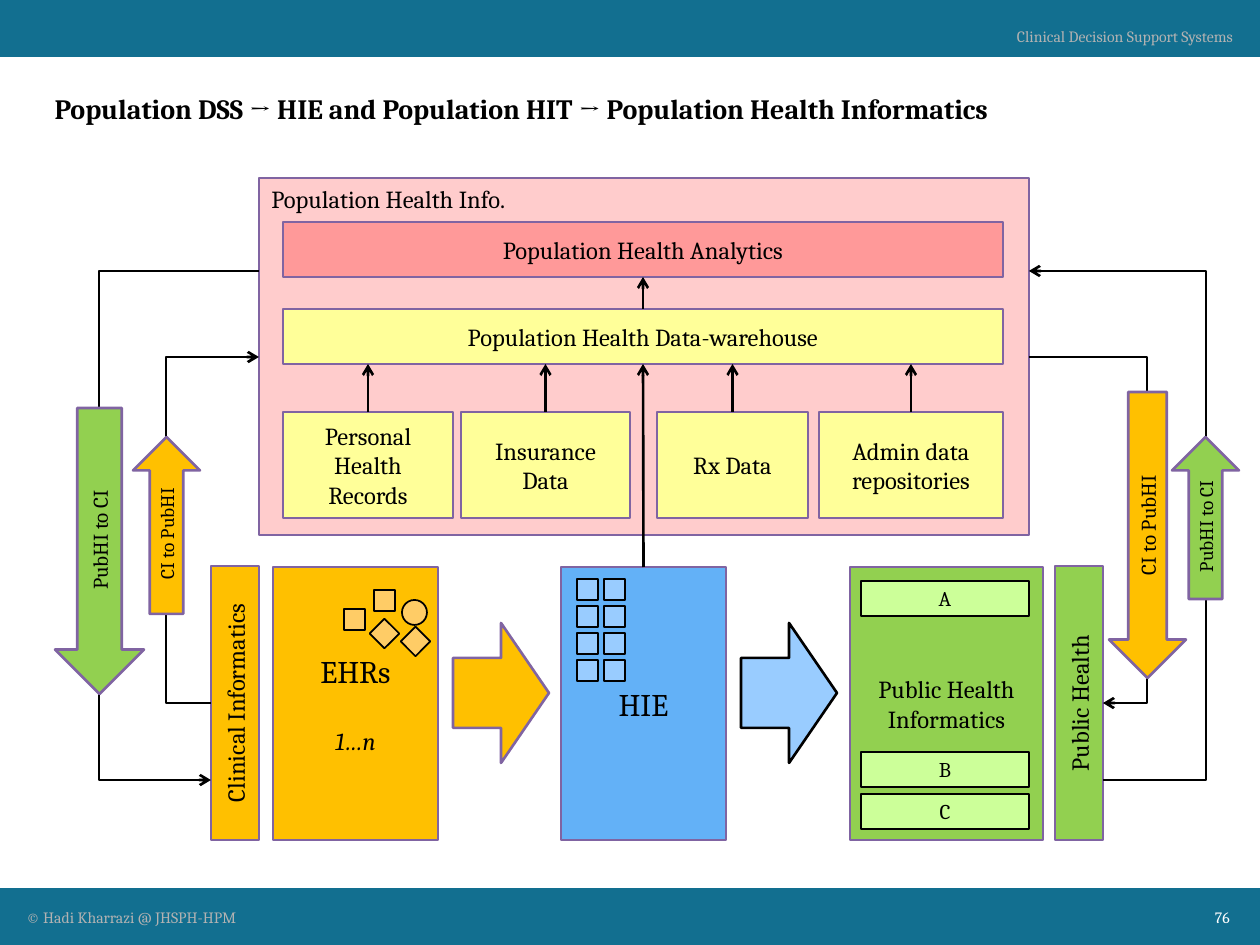
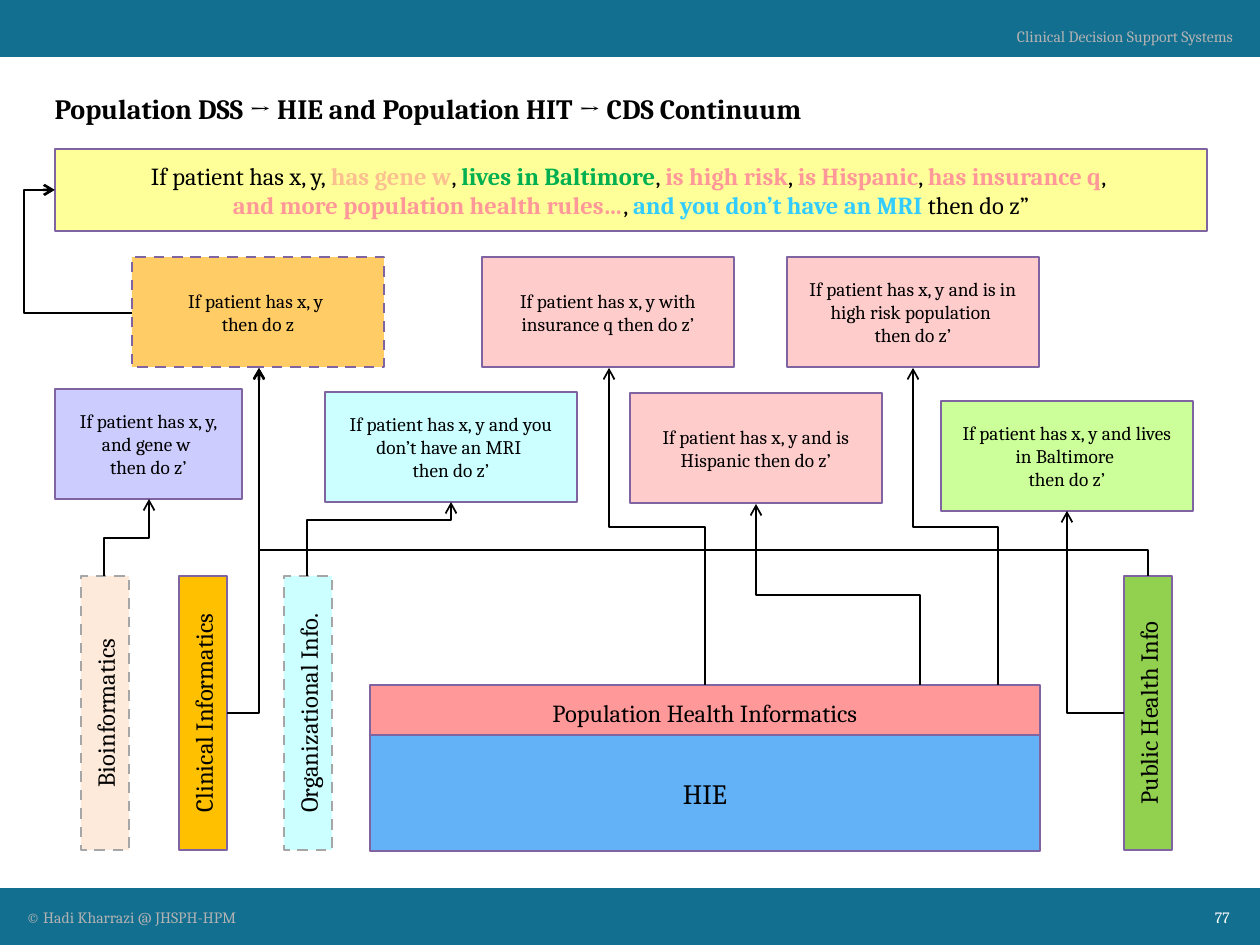
import pptx
import pptx.dml.color
import pptx.enum.dml
import pptx.enum.shapes
import pptx.enum.text
import pptx.oxml.ns
import pptx.util
from lxml import etree

SHAPE = pptx.enum.shapes.MSO_SHAPE
CONNECTOR = pptx.enum.shapes.MSO_CONNECTOR
ALIGN = pptx.enum.text.PP_ALIGN
ANCHOR = pptx.enum.text.MSO_ANCHOR
qn = pptx.oxml.ns.qn

PX = 914400 / 126
SLIDE_W, SLIDE_H = 1260, 945
BAND_H = 57
FONT = "Cambria"

BLACK, WHITE, GREY = "000000", "FFFFFF", "B2B2B2"
TEAL, PURPLE, DASH_GREY = "126F90", "8064A2", "A6A6A6"
ORANGE, LIGHT_ORANGE = "FFC000", "FFCC66"
GREEN, LIGHT_GREEN = "92D050", "CCFF99"
BLUE, LIGHT_BLUE, CYAN = "63B1F7", "99CCFF", "CCFFFF"
PINK, LIGHT_PINK, YELLOW = "FF9999", "FFCCCC", "FFFF99"
PEACH, LILAC = "FDEADA", "CCCCFF"


def px(n):
    return pptx.util.Emu(round(n * PX))


def rgb(value):
    return pptx.dml.color.RGBColor.from_string(value)


def write(sp, content, size=14, color=BLACK, bold=False, italic=False,
          align=ALIGN.CENTER, anchor=ANCHOR.MIDDLE, vert=None, before=0):
    """Add one paragraph: a string, or a list of (text, color or None) where coloured runs are bold."""
    tf = sp.text_frame
    tf.word_wrap = True
    tf.vertical_anchor = anchor
    if vert:
        tf._txBody.bodyPr.set("vert", vert)
    p = tf.add_paragraph() if tf.text else tf.paragraphs[0]
    p.alignment = align
    p.space_before = pptx.util.Pt(before)
    runs = [(content, None)] if isinstance(content, str) else content
    for words, accent in runs:
        for i, line in enumerate(words.split("\n")):
            if i:
                p.add_line_break()
            if not line:
                continue
            r = p.add_run()
            r.text = line
            r.font.name = FONT
            r.font.size = pptx.util.Pt(size)
            r.font.bold = bold or accent is not None
            r.font.italic = italic
            r.font.color.rgb = rgb(accent or color)


def shape(s, x, y, w, h, fill, line=PURPLE, width=1.5, kind=SHAPE.RECTANGLE,
          rotation=0, dash=False, text=None, **fmt):
    sp = s.shapes.add_shape(kind, px(x), px(y), px(w), px(h))
    sp.shadow.inherit = False
    sp.rotation = rotation
    sp.fill.solid()
    sp.fill.fore_color.rgb = rgb(fill)
    if line:
        sp.line.color.rgb = rgb(line)
        sp.line.width = pptx.util.Pt(width)
        if dash:
            sp.line.dash_style = pptx.enum.dml.MSO_LINE.DASH
    else:
        sp.line.fill.background()
    if text:
        write(sp, text, **fmt)
    return sp


def textbox(s, x, y, w, h, text, **fmt):
    write(s.shapes.add_textbox(px(x), px(y), px(w), px(h)), text, **fmt)


def symbol(s, x, y, size, fill, **look):
    """Small outlined item standing for one system or record."""
    shape(s, x, y, size, size, fill, BLACK, 1, **look)


def bar(s, x, y, fill, text, **look):
    """Tall narrow box with text that reads upwards."""
    shape(s, x, y, 48, 274, fill, text=text, vert="vert270", **look)


def flow_arrow(s, x, y, w, h, fill, text, size, down=False):
    shape(s, x, y, w, h, fill, kind=SHAPE.UP_ARROW, rotation=180 if down else 0,
          text=text, size=size, vert="vert" if down else "vert270")


def connector(s, kind, x1, y1, x2, y2, width):
    """Black connector with an arrowhead at its end and no shadow."""
    c = s.shapes.add_connector(kind, px(x1), px(y1), px(x2), px(y2))
    c.line.color.rgb = rgb(BLACK)
    c.line.width = pptx.util.Pt(width)
    etree.SubElement(c.line._get_or_add_ln(), qn("a:tailEnd"), type="arrow")
    etree.SubElement(c._element.spPr, qn("a:effectLst"))
    return c


def rise(s, source, target, joined=False):
    """Straight arrow from the top of source up to the bottom of target."""
    x = (source.left + source.width / 2) / PX
    c = connector(s, CONNECTOR.STRAIGHT, x, source.top / PX,
                  x, (target.top + target.height) / PX, 1.5)
    c.begin_connect(source, 0)
    if joined:
        c.end_connect(target, 2)


def set_bend(c, share):
    guides = c._element.spPr.find(qn("a:prstGeom")).find(qn("a:avLst"))
    etree.SubElement(guides, qn("a:gd"), name="adj1", fmla=f"val {round(share * 100000)}")


def elbow_side(s, x1, y1, x2, y2, bend_x, width=1.5):
    """Leave sideways, run vertically at bend_x, arrive sideways."""
    c = connector(s, CONNECTOR.ELBOW, x1, y1, x2, y2, width)
    set_bend(c, (bend_x - x1) / (x2 - x1))


def elbow_up(s, x1, y1, x2, y2, bend_y, width=1):
    """Leave upwards, run sideways at bend_y, arrive upwards."""
    cx, cy = (x1 + x2) / 2, (y1 + y2) / 2
    half_run, half_rise = (x2 - x1) / 2, (y1 - y2) / 2
    c = connector(s, CONNECTOR.ELBOW, cx - half_rise, cy - half_run,
                  cx + half_rise, cy + half_run, width)
    c._element.spPr.find(qn("a:xfrm")).set("rot", str(270 * 60000))
    set_bend(c, (y1 - bend_y) / (y1 - y2))


def elbow_corner(s, x1, y1, x2, y2):
    """Leave sideways and arrive vertically."""
    c = connector(s, CONNECTOR.ELBOW, x1, y1, x2, y2, 1)
    c._element.spPr.find(qn("a:prstGeom")).set("prst", "bentConnector2")


def new_slide(prs, title, number):
    s = prs.slides.add_slide(prs.slide_layouts[5])
    for y in (0, SLIDE_H - BAND_H):
        shape(s, 0, y, SLIDE_W, BAND_H, TEAL, line=None)
    small = dict(size=9, anchor=ANCHOR.TOP)
    textbox(s, 14, 902, 782, 32, "© Hadi Kharrazi @ JHSPH-HPM", color=GREY,
            align=ALIGN.LEFT, **small)
    textbox(s, 975, 21, 270, 32, "Clinical Decision Support Systems", color=GREY,
            align=ALIGN.RIGHT, **small)
    textbox(s, 1160, 902, 82, 32, number, color=WHITE, align=ALIGN.RIGHT, **small)
    sp = s.shapes.title
    sp.left, sp.top, sp.width, sp.height = px(42), px(83), px(1176), px(50)
    write(sp, title, size=16, bold=True, align=ALIGN.LEFT)
    return s


def population_slide(prs):
    s = new_slide(prs, "Population DSS → HIE and Population HIT → Population Health Informatics", "76")
    shape(s, 259, 178, 770, 357, LIGHT_PINK, text="Population Health Info.",
          align=ALIGN.LEFT, anchor=ANCHOR.TOP)
    analytics = shape(s, 283, 222, 720, 55, PINK, text="Population Health Analytics")
    warehouse = shape(s, 283, 309, 720, 55, YELLOW, text="Population Health Data-warehouse")
    rise(s, warehouse, analytics, joined=True)
    for x, w, name in [(283, 170, "Personal Health Records"), (461, 169, "Insurance Data"),
                       (657, 151, "Rx Data"), (819, 184, "Admin data repositories")]:
        rise(s, shape(s, x, 412, w, 106, YELLOW, text=name), warehouse)

    hie = shape(s, 561, 567, 165, 273, BLUE, text="HIE", size=18)
    rise(s, hie, warehouse, joined=True)
    for row in range(4):
        for col in range(2):
            symbol(s, 577 + 27 * col, 579 + 27 * row, 21, LIGHT_BLUE)

    ehrs = shape(s, 273, 567, 165, 273, ORANGE, text="EHRs", size=18)
    write(ehrs, "1…n", italic=True, before=21)
    for x, y, angle in [(405, 631, 45), (374, 623, 315), (344, 609, 0), (374, 590, 0)]:
        symbol(s, x, y, 21, LIGHT_ORANGE, rotation=angle)
    symbol(s, 402, 600, 25, LIGHT_ORANGE, kind=SHAPE.OVAL)
    for x, fill, line in [(431, ORANGE, PURPLE), (719, LIGHT_BLUE, BLACK)]:
        shape(s, x, 645, 140, 96, fill, line, kind=SHAPE.UP_ARROW, rotation=90)

    shape(s, 850, 567, 193, 273, GREEN, text="Public Health Informatics")
    for y, name in [(581, "A"), (752, "B"), (794, "C")]:
        shape(s, 861, y, 168, 35, LIGHT_GREEN, BLACK, 1, text=name, size=12)
    bar(s, 211, 566, ORANGE, "Clinical Informatics")
    bar(s, 1055, 566, GREEN, "Public Health")

    elbow_side(s, 1029, 357, 1103, 703, 1147)
    elbow_side(s, 211, 703, 259, 357, 166)
    elbow_side(s, 259, 271, 211, 780, 99)
    elbow_side(s, 1103, 780, 1029, 271, 1206)
    flow_arrow(s, 133, 437, 67, 177, ORANGE, "CI to PubHI", 11)
    flow_arrow(s, 1109, 392, 77, 286, ORANGE, "CI to PubHI", 12, down=True)
    flow_arrow(s, 55, 408, 89, 286, GREEN, "PubHI to CI", 12, down=True)
    flow_arrow(s, 1172, 437, 67, 162, GREEN, "PubHI to CI", 11)


def continuum_slide(prs):
    s = new_slide(prs, "Population DSS → HIE and Population HIT → CDS Continuum", "77")
    bar(s, 81, 576, PEACH, "Bioinformatics", line=DASH_GREY, dash=True)
    bar(s, 179, 576, ORANGE, "Clinical Informatics")
    bar(s, 284, 576, CYAN, "Organizational Info.", line=DASH_GREY, dash=True)
    bar(s, 1124, 576, GREEN, "Public Health Info")
    shape(s, 370, 685, 670, 55, PINK, text="Population Health Informatics")
    shape(s, 370, 735, 670, 116, BLUE, text="HIE", size=16)

    rules = [
        (132, 257, 252, LIGHT_ORANGE, "If patient has x, y \nthen do z"),
        (482, 257, 252, LIGHT_PINK, "If patient has x, y with insurance q then do z’"),
        (787, 257, 252, LIGHT_PINK, "If patient has x, y and is in high risk population \nthen do z’"),
        (55, 389, 187, LILAC, "If patient has x, y, and gene w \nthen do z’"),
        (325, 392, 252, CYAN, "If patient has x, y and you don’t have an MRI \nthen do z’"),
        (630, 393, 252, LIGHT_PINK, "If patient has x, y and is Hispanic then do z’"),
        (941, 401, 252, LIGHT_GREEN, "If patient has x, y and lives in Baltimore \nthen do z’"),
    ]
    for x, y, w, fill, rule in rules:
        shape(s, x, y, w, 110, fill, dash=fill == LIGHT_ORANGE, text=rule, size=11)
    shape(s, 55, 149, 1152, 82, YELLOW, text=[
        ("If patient has x, y, ", None), ("has gene w", "FAC090"), (", ", None),
        ("lives in Baltimore", "00B050"), (", ", None), ("is high risk", PINK), (", ", None),
        ("is Hispanic", PINK), (", ", None), ("has insurance q", PINK), (", \n", None),
        ("and more population health rules…", PINK), (", ", None),
        ("and you don’t have an MRI ", "33CCFF"), ("then do z”", None)])

    elbow_up(s, 1148, 576, 259, 368, 550, width=1.5)
    for x1, y1, x2, y2, bend_y in [(920, 685, 756, 504, 595), (705, 685, 609, 368, 527),
                                   (998, 685, 913, 368, 527), (307, 576, 451, 502, 520),
                                   (104, 576, 149, 499, 538)]:
        elbow_up(s, x1, y1, x2, y2, bend_y)
    elbow_corner(s, 1124, 713, 1067, 511)
    elbow_corner(s, 227, 713, 259, 368)
    elbow_side(s, 132, 313, 55, 190, 24)


def main():
    prs = pptx.Presentation()
    prs.slide_width, prs.slide_height = px(SLIDE_W), px(SLIDE_H)
    population_slide(prs)
    continuum_slide(prs)
    prs.save("out.pptx")


if __name__ == "__main__":
    main()
